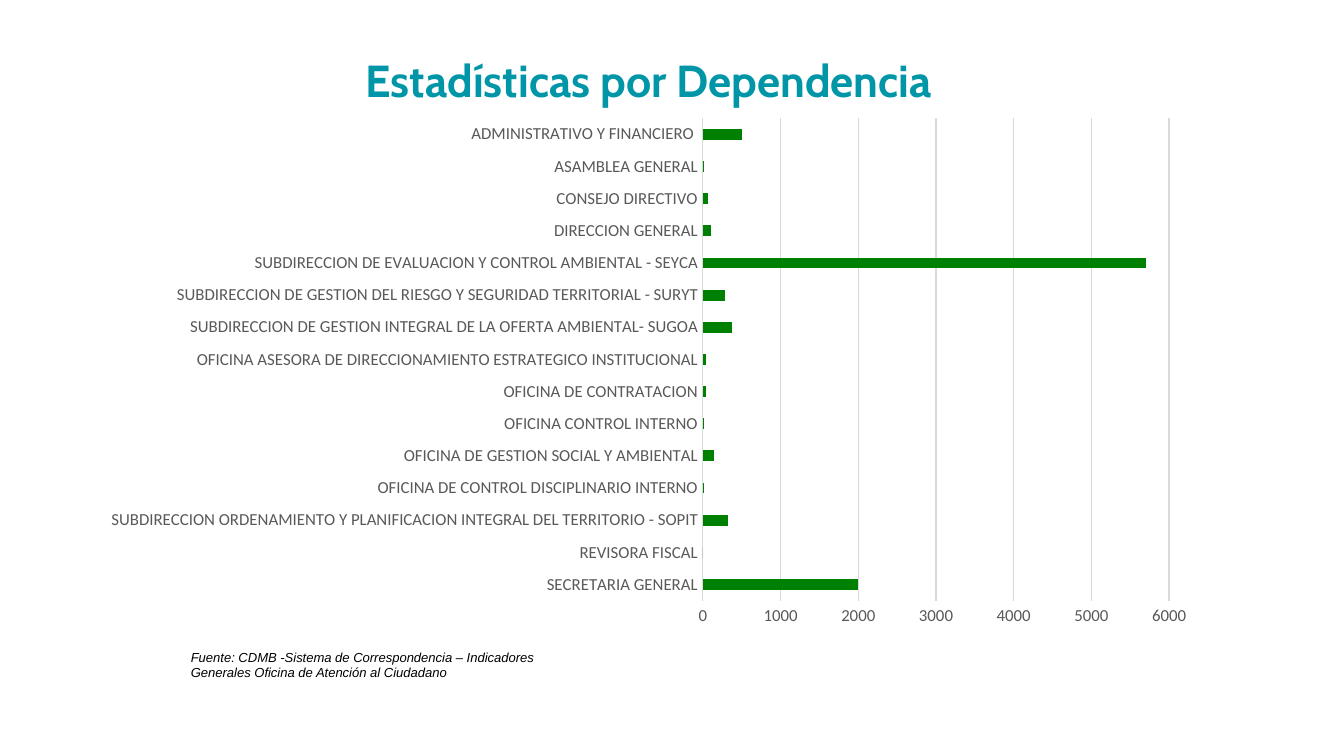
import pptx
import pptx.util
import pptx.chart.data
import pptx.dml.color
import pptx.enum.chart
import pptx.enum.text
import pptx.oxml

Inches, Pt = pptx.util.Inches, pptx.util.Pt

# Content
TITLE = "Estadísticas por Dependencia"
SOURCE = ("Fuente: CDMB -Sistema de Correspondencia – Indicadores "
          "Generales Oficina de Atención al Ciudadano")
DATA = [  # bottom to top
    ("SECRETARIA GENERAL", 2000),
    ("REVISORA FISCAL", 0),
    ("SUBDIRECCION ORDENAMIENTO Y PLANIFICACION INTEGRAL DEL TERRITORIO - SOPIT", 330),
    ("OFICINA DE CONTROL DISCIPLINARIO INTERNO", 5),
    ("OFICINA DE GESTION SOCIAL Y AMBIENTAL", 140),
    ("OFICINA CONTROL INTERNO", 5),
    ("OFICINA DE CONTRATACION", 45),
    ("OFICINA ASESORA DE DIRECCIONAMIENTO ESTRATEGICO INSTITUCIONAL", 45),
    ("SUBDIRECCION DE GESTION INTEGRAL DE LA OFERTA AMBIENTAL- SUGOA", 370),
    ("SUBDIRECCION DE GESTION DEL RIESGO Y SEGURIDAD TERRITORIAL - SURYT", 280),
    ("SUBDIRECCION DE EVALUACION Y CONTROL AMBIENTAL - SEYCA", 5700),
    ("DIRECCION GENERAL", 100),
    ("CONSEJO DIRECTIVO", 70),
    ("ASAMBLEA GENERAL", 5),
    ("ADMINISTRATIVO Y FINANCIERO ", 500),
]

# Theme: font, size, colour
THEME = {
    "title": ("Cabin", 24, "0096A7"),
    "axis": ("Calibri", 9, "595959"),
    "source": ("Arial", 7, "000000"),
    "bar": "008000",
    "grid": "D9D9D9",
}
# Left, top, width, height in inches; the plot sits inside the chart
CHART = (0.67, 0.8, 8.33, 3.93)
PLOT = (4.56, 0.08, 3.47, 3.59)


def color(code):
    return pptx.dml.color.RGBColor.from_string(code)


def style(font, key):
    name, size, code = THEME[key]
    font.name, font.size = name, Pt(size)
    font.color.rgb = color(code)


def fill_box(shape, text, key):
    frame = shape.text_frame
    frame.margin_left = frame.margin_right = 0
    frame.margin_top = frame.margin_bottom = 0
    frame.word_wrap = True
    frame.vertical_anchor = pptx.enum.text.MSO_ANCHOR.TOP
    frame.text = text
    para = frame.paragraphs[0]
    para.alignment = pptx.enum.text.PP_ALIGN.LEFT
    font = para.runs[0].font
    style(font, key)
    return font


def rule(line):
    line.color.rgb = color(THEME["grid"])
    line.width = Pt(0.75)


def place_plot(chart):
    area = chart._chartSpace.chart.plotArea
    for old in area.findall(pptx.oxml.ns.qn("c:layout")):
        area.remove(old)
    wide, high = CHART[2:]
    spots = "".join(
        f'<c:{key} val="{part / whole:.4f}"/>'
        for key, part, whole in zip("xywh", PLOT, (wide, high, wide, high)))
    area.insert(0, pptx.oxml.parse_xml(
        f'<c:layout {pptx.oxml.ns.nsdecls("c")}><c:manualLayout>'
        '<c:layoutTarget val="inner"/><c:xMode val="edge"/><c:yMode val="edge"/>'
        f'{spots}</c:manualLayout></c:layout>'))


def add_bars(slide):
    data = pptx.chart.data.CategoryChartData()
    data.categories = [name for name, _ in DATA]
    data.add_series("Series 1", [count for _, count in DATA])
    kinds = pptx.enum.chart
    chart = slide.shapes.add_chart(
        kinds.XL_CHART_TYPE.BAR_CLUSTERED, *map(Inches, CHART), data).chart
    chart.has_legend = chart.has_title = False
    style(chart.font, "axis")

    # Bars
    plot = chart.plots[0]
    plot.gap_width = 198
    plot.vary_by_categories = False
    fill = plot.series[0].format.fill
    fill.solid()
    fill.fore_color.rgb = color(THEME["bar"])

    # Axes
    cats, vals = chart.category_axis, chart.value_axis
    for axis in (cats, vals):
        axis.major_tick_mark = axis.minor_tick_mark = kinds.XL_TICK_MARK.NONE
        style(axis.tick_labels.font, "axis")
    rule(cats.format.line)
    vals.minimum_scale, vals.maximum_scale, vals.major_unit = 0, 6000, 1000
    vals.format.line.fill.background()
    vals.has_major_gridlines = True
    rule(vals.major_gridlines.format.line)
    place_plot(chart)


def main():
    deck = pptx.Presentation()
    # Widescreen, 16 to 9
    deck.slide_width = Inches(10)
    deck.slide_height = deck.slide_width * 9 // 16
    slide = deck.slides.add_slide(deck.slide_layouts[5])

    # Source note
    note = slide.shapes.add_textbox(
        Inches(1.42), Inches(4.83), Inches(2.58), Inches(0.26))
    fill_box(note, SOURCE, "source").italic = True

    # Title
    title = slide.shapes.title
    title.left, title.top = Inches(2.72), Inches(0.39)
    title.width, title.height = Inches(5.38), Inches(0.4)
    fill_box(title, TITLE, "title").bold = True

    add_bars(slide)
    deck.save("out.pptx")


if __name__ == "__main__":
    main()
